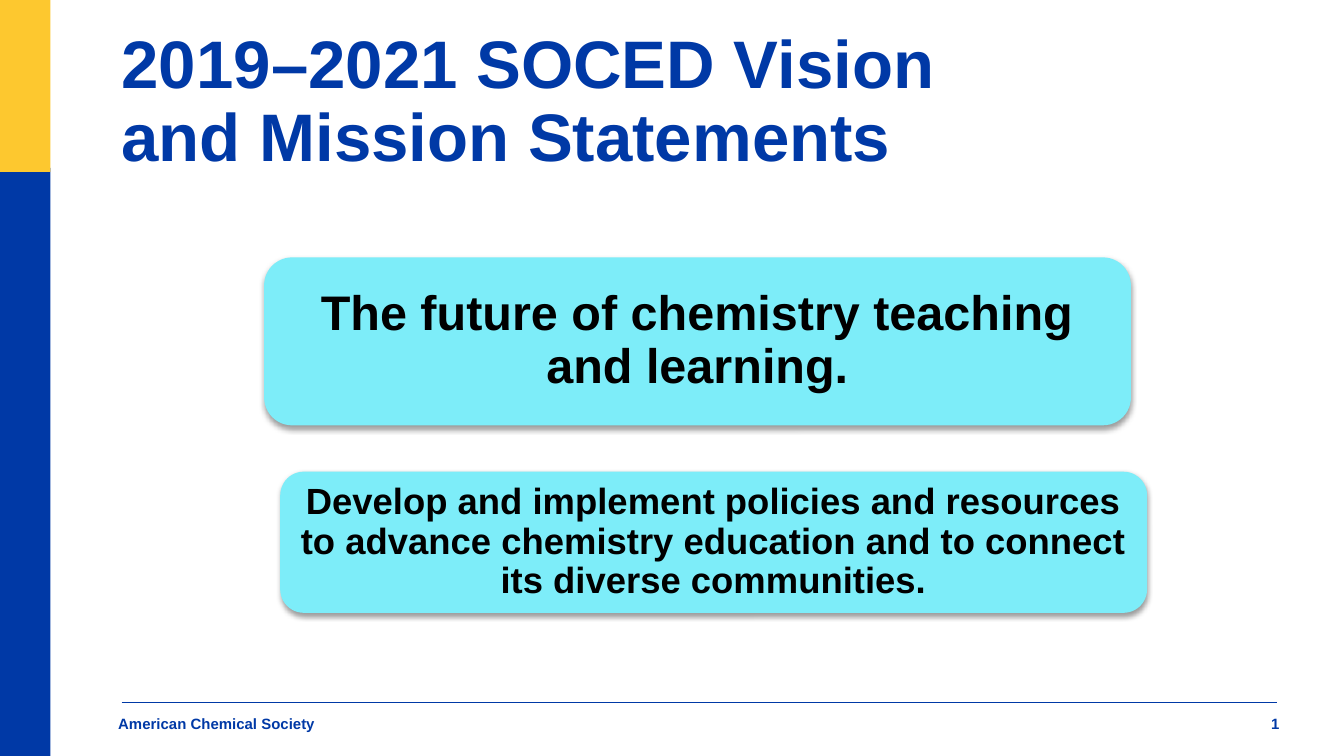
"""Build the SOCED vision and mission statements slide."""
from lxml import etree
from pptx import Presentation
from pptx.dml.color import RGBColor
from pptx.enum.shapes import MSO_CONNECTOR, MSO_SHAPE
from pptx.enum.text import MSO_ANCHOR, PP_ALIGN
from pptx.oxml import parse_xml
from pptx.oxml.ns import nsdecls, qn
from pptx.util import Inches, Pt

RECTANGLE, ROUNDED = MSO_SHAPE.RECTANGLE, MSO_SHAPE.ROUNDED_RECTANGLE
STRAIGHT = MSO_CONNECTOR.STRAIGHT
TOP, MIDDLE, BOTTOM = MSO_ANCHOR.TOP, MSO_ANCHOR.MIDDLE, MSO_ANCHOR.BOTTOM
LEFT, CENTER, RIGHT = PP_ALIGN.LEFT, PP_ALIGN.CENTER, PP_ALIGN.RIGHT

BLUE = RGBColor(0x00, 0x39, 0xA6)
YELLOW = RGBColor(0xFD, 0xC8, 0x2F)
AQUA = RGBColor(0x7D, 0xED, 0xF9)
BLACK = RGBColor(0x00, 0x00, 0x00)

presentation = Presentation()
presentation.slide_width = Inches(10)
presentation.slide_height = presentation.slide_width * 9 // 16
COLUMN = presentation.slide_width / 100
ROW = presentation.slide_height / 56.25
slide = presentation.slides.add_slide(presentation.slide_layouts[6])


def grid(left, top, width, height):
    return [round(size) for size in
            (left * COLUMN, top * ROW, width * COLUMN, height * ROW)]


def add_panel(kind, box, color):
    shape = slide.shapes.add_shape(kind, *grid(*box))
    shape.shadow.inherit = False
    shape.fill.solid()
    shape.fill.fore_color.rgb = color
    shape.line.fill.background()
    return shape


left, top, right, bottom = grid(9.05, 52.25, 95, 52.25)
footer_rule = slide.shapes.add_connector(STRAIGHT, left, top, right, bottom)
footer_rule.line.color.rgb = BLUE
footer_rule.line.width = Pt(0.75)
etree.SubElement(footer_rule._element.spPr, qn("a:effectLst"))

add_panel(RECTANGLE, (0, 12.5, 3.75, 43.75), BLUE)
add_panel(RECTANGLE, (0, 0, 3.75, 12.8), YELLOW)

for box in ((19.65, 19.15, 64.5, 12.5), (20.85, 35.1, 64.5, 10.5)):
    card = add_panel(ROUNDED, box, AQUA)
    effects = card._element.spPr.find(qn("a:effectLst"))
    effects.append(parse_xml(
        f'<a:outerShdw {nsdecls("a")} blurRad="{Pt(3.1)}" dist="{Pt(1.6)}" '
        'dir="5400000" rotWithShape="0"><a:srgbClr val="000000">'
        '<a:alpha val="38000"/></a:srgbClr></a:outerShdw>'))

texts = [
    ("2019–2021 SOCED Vision and Mission Statements",
     (9.05, 5.4, 61.4, 7.7), 36, BLUE, BOTTOM, LEFT, 0.9, 0),
    ("The future of chemistry teaching and learning.",
     (20.3, 19.75, 63.2, 11.3), 26, BLACK, MIDDLE, CENTER, 0.9, 0.11),
    ("Develop and implement policies and resources to advance chemistry "
     "education and to connect its diverse communities.",
     (21.4, 35.6, 63.4, 9.5), 19.5, BLACK, MIDDLE, CENTER, 0.9, 0.08),
    ("American Chemical Society",
     (8.8, 53.2, 31.7, 2.3), 8, BLUE, TOP, LEFT, 1.0, 0),
    ("1", (75.8, 53.2, 19.4, 2.4), 8, BLUE, TOP, RIGHT, 1.0, 0),
]
for text, box, size, color, anchor, alignment, spacing, inset in texts:
    frame = slide.shapes.add_textbox(*grid(*box)).text_frame
    frame.word_wrap = True
    frame.vertical_anchor = anchor
    for side in ("left", "top", "right", "bottom"):
        setattr(frame, f"margin_{side}", Inches(inset))
    paragraph = frame.paragraphs[0]
    paragraph.alignment = alignment
    paragraph.line_spacing = spacing
    run = paragraph.add_run()
    run.text = text
    run.font.color.rgb = color
    for name, value in {"name": "Arial", "size": Pt(size), "bold": True}.items():
        setattr(run.font, name, value)

presentation.save("out.pptx")
